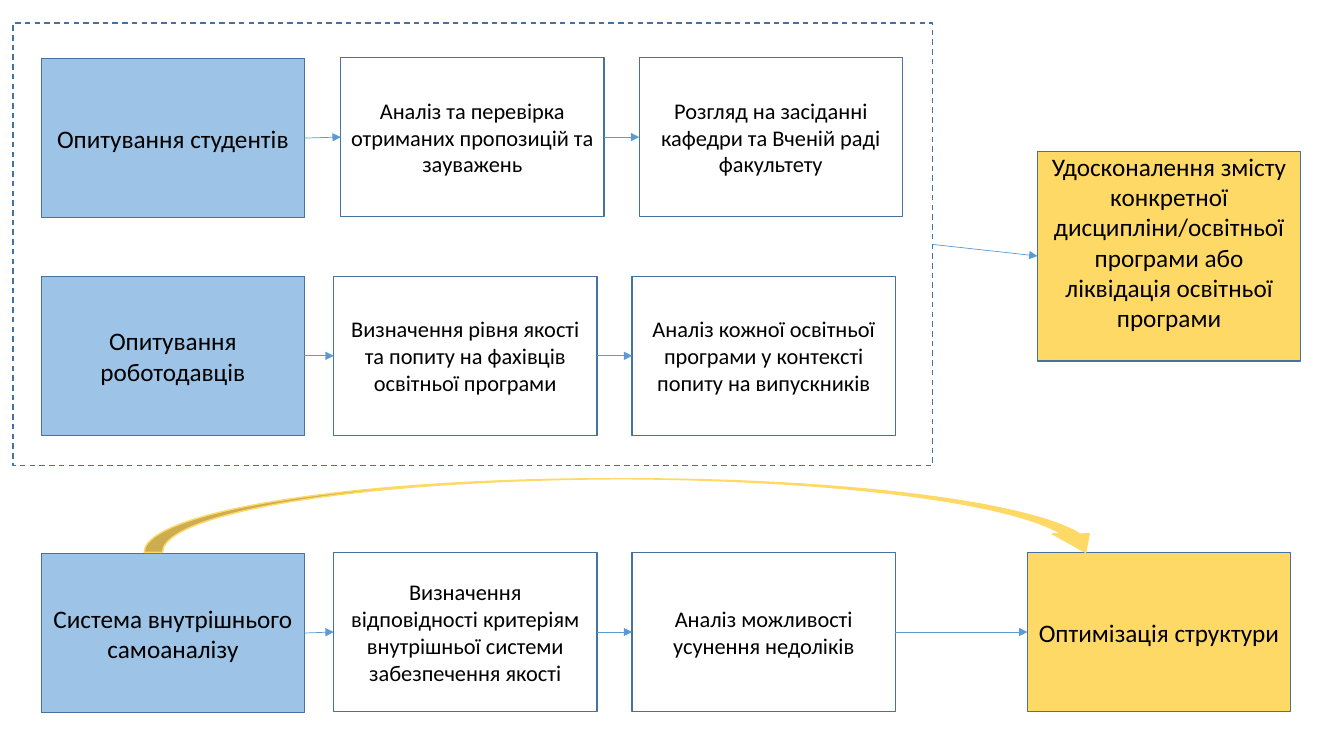
from lxml import etree
from pptx import Presentation
from pptx import util as u
from pptx.dml.color import RGBColor
from pptx.enum import dml, shapes, text
from pptx.oxml.ns import qn

BLUE, YELLOW, WHITE, OUTLINE, ARROW = "9DC3E6", "FFD966", "FFFFFF", "43739E", "5B9BD5"
BOX_WIDTH, BOX_HEIGHT = 2.61, 1.58

deck = Presentation()
deck.slide_width, deck.slide_height = u.Inches(13.33), u.Inches(7.5)
page = deck.slides.add_slide(deck.slide_layouts[6])


def add_box(left, top, width, height, fill, wording="", size=18,
            line=OUTLINE, kind=shapes.MSO_SHAPE.RECTANGLE):
    box = page.shapes.add_shape(kind, *map(u.Inches, (left, top, width, height)))
    box.shadow.inherit = False
    box.fill.solid()
    box.fill.fore_color.rgb = RGBColor.from_string(fill)
    box.line.color.rgb = RGBColor.from_string(line)
    box.line.width = u.Pt(1)
    frame = box.text_frame
    frame.word_wrap = True
    frame.vertical_anchor = text.MSO_ANCHOR.MIDDLE
    if wording:
        frame.text = wording
        para = frame.paragraphs[0]
        para.alignment = text.PP_ALIGN.CENTER
        font = para.runs[0].font
        font.name, font.size = "Calibri", u.Pt(size)
        font.color.rgb = RGBColor.from_string("000000")
    return box


def join(source, target):
    """Draw an arrow from the right side of source to the left side of target."""
    arrow = page.shapes.add_connector(shapes.MSO_CONNECTOR.STRAIGHT, 0, 0, 0, 0)
    arrow.begin_connect(source, 3)
    arrow.end_connect(target, 1)
    arrow.line.color.rgb = RGBColor.from_string(ARROW)
    arrow.line.width = u.Pt(0.5)
    etree.SubElement(arrow.line._get_or_add_ln(), qn("a:tailEnd"), type="triangle")
    etree.SubElement(arrow._element.spPr, qn("a:effectLst"))


surveys = add_box(0.13, 0.23, 9.12, 4.39, WHITE)
surveys.line.dash_style = dml.MSO_LINE.DASH

# Each row: top of the source box, top and left of the first step, wordings
rows = [
    (0.58, 0.57, 3.38, ["Опитування студентів",
                        "Аналіз та перевірка отриманих пропозицій та зауважень",
                        "Розгляд на засіданні кафедри та Вченій раді факультету"]),
    (2.74, 2.74, 3.31, ["Опитування роботодавців",
                        "Визначення рівня якості та попиту на фахівців освітньої програми",
                        "Аналіз кожної освітньої програми у контексті попиту на випускників"]),
    (5.49, 5.48, 3.31, ["Система внутрішнього самоаналізу",
                        "Визначення відповідності критеріям внутрішньої системи забезпечення якості",
                        "Аналіз можливості усунення недоліків"]),
]
for source_top, step_top, step_left, (source, *steps) in rows:
    last_box = add_box(0.41, source_top, BOX_WIDTH, BOX_HEIGHT, BLUE, source)
    for index, step in enumerate(steps):
        step_box = add_box(step_left + index * 2.96, step_top,
                           BOX_WIDTH, BOX_HEIGHT, WHITE, step, 16)
        join(last_box, step_box)
        last_box = step_box

structure = add_box(10.19, 5.48, BOX_WIDTH, BOX_HEIGHT, YELLOW, "Оптимізація структури")
join(last_box, structure)

improvement = add_box(10.29, 1.5, BOX_WIDTH, 2.08, YELLOW,
                      "Удосконалення змісту конкретної дисципліни/освітньої "
                      "програми або ліквідація освітньої програми")
improvement.text_frame.vertical_anchor = text.MSO_ANCHOR.TOP
improvement.text_frame.margin_top = 0
join(surveys, improvement)

add_box(1.43, 4.75, 9.52, 0.73, YELLOW, line=YELLOW,
        kind=shapes.MSO_SHAPE.CURVED_DOWN_ARROW)

deck.save("out.pptx")
